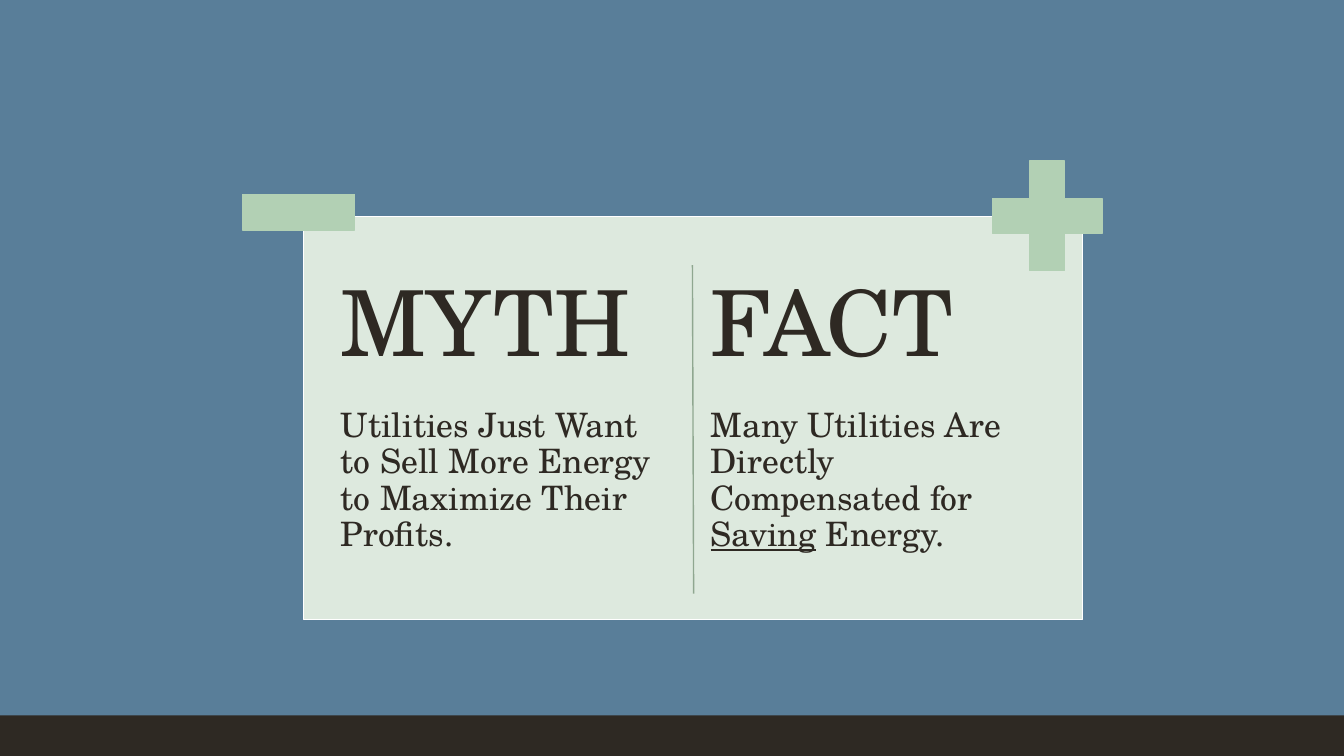
from lxml import etree
from pptx import Presentation
from pptx.dml.color import RGBColor
from pptx.enum.shapes import MSO_CONNECTOR, MSO_SHAPE
from pptx.enum.text import MSO_ANCHOR, PP_ALIGN
from pptx.oxml.ns import qn
from pptx.util import Cm, Pt

COLORS = {
    "background": "597E99",
    "dark": "2E2923",
    "card": "DDE9DE",
    "card_edge": "FFFFFF",
    "sign": "B2D0B4",
    "divider": "8FA790",
}
WIDTH, HEIGHT = 33.87, 19.05


def color(name):
    return RGBColor.from_string(COLORS[name])


class SlideBuilder:
    """Adds styled elements to one slide; all lengths are in centimetres."""

    font_name = "TeX Gyre Schola"
    inset = 0.36

    def __init__(self, slide):
        self.slide = slide
        slide.background.fill.solid()
        slide.background.fill.fore_color.rgb = color("background")

    def shape(self, kind, left, top, width, height, fill, edge=None):
        shape = self.slide.shapes.add_shape(
            kind, Cm(left), Cm(top), Cm(width), Cm(height))
        shape.shadow.inherit = False
        shape.fill.solid()
        shape.fill.fore_color.rgb = color(fill)
        if edge:
            shape.line.color.rgb = color(edge)
            shape.line.width = Pt(1)
        else:
            shape.line.fill.background()

    def divider(self, x1, y1, x2, y2):
        line = self.slide.shapes.add_connector(
            MSO_CONNECTOR.STRAIGHT, Cm(x1), Cm(y1), Cm(x2), Cm(y2))
        line.line.color.rgb = color("divider")
        line.line.width = Pt(1)
        etree.SubElement(line._element.spPr, qn("a:effectLst"))

    def column(self, left, top, width, height, heading, statement):
        """Adds a large heading over a statement of (text, underlined) runs."""
        frame = self.slide.shapes.add_textbox(
            Cm(left), Cm(top), Cm(width), Cm(height)).text_frame
        frame.word_wrap = True
        frame.vertical_anchor = MSO_ANCHOR.TOP
        frame.margin_left = frame.margin_right = Cm(self.inset)
        frame.margin_top = frame.margin_bottom = Cm(self.inset)
        self.paragraph(frame.paragraphs[0], [(heading, False)], 65)
        self.paragraph(frame.add_paragraph(), statement, 24)

    def paragraph(self, paragraph, runs, size):
        paragraph.alignment = PP_ALIGN.LEFT
        paragraph.line_spacing = 0.9
        paragraph.space_after = Pt(round(size * 0.35))
        paragraph.font.name = self.font_name
        paragraph.font.size = Pt(size)
        paragraph.font.color.rgb = color("dark")
        for text, underlined in runs:
            run = paragraph.add_run()
            run.text = text
            if underlined:
                run.font.underline = True


def main():
    presentation = Presentation()
    presentation.slide_width, presentation.slide_height = Cm(WIDTH), Cm(HEIGHT)
    blank = presentation.slide_layouts.get_by_name("Blank")
    builder = SlideBuilder(presentation.slides.add_slide(blank))

    builder.shape(MSO_SHAPE.RECTANGLE, 0, 18.03, WIDTH, HEIGHT - 18.03, "dark")
    builder.shape(MSO_SHAPE.RECTANGLE, 7.65, 5.46, 19.63, 10.16, "card", "card_edge")

    myth = [("Utilities Just Want to Sell More Energy to Maximize Their Profits.", False)]
    fact = [("Many Utilities Are Directly Compensated for ", False),
            ("Saving", True), (" Energy.", False)]
    for left, heading, statement in ((8.23, "MYTH", myth), (17.55, "FACT", fact)):
        builder.column(left, 6.65, 9.12, 8.69, heading, statement)

    builder.shape(MSO_SHAPE.MATH_MINUS, 5.61, 3.43, 3.84, 3.84, "sign", "sign")
    builder.shape(MSO_SHAPE.MATH_PLUS, 24.51, 3.56, 3.76, 3.76, "sign", "sign")
    builder.divider(17.45, 6.68, 17.48, 14.96)

    presentation.save("out.pptx")


if __name__ == "__main__":
    main()
